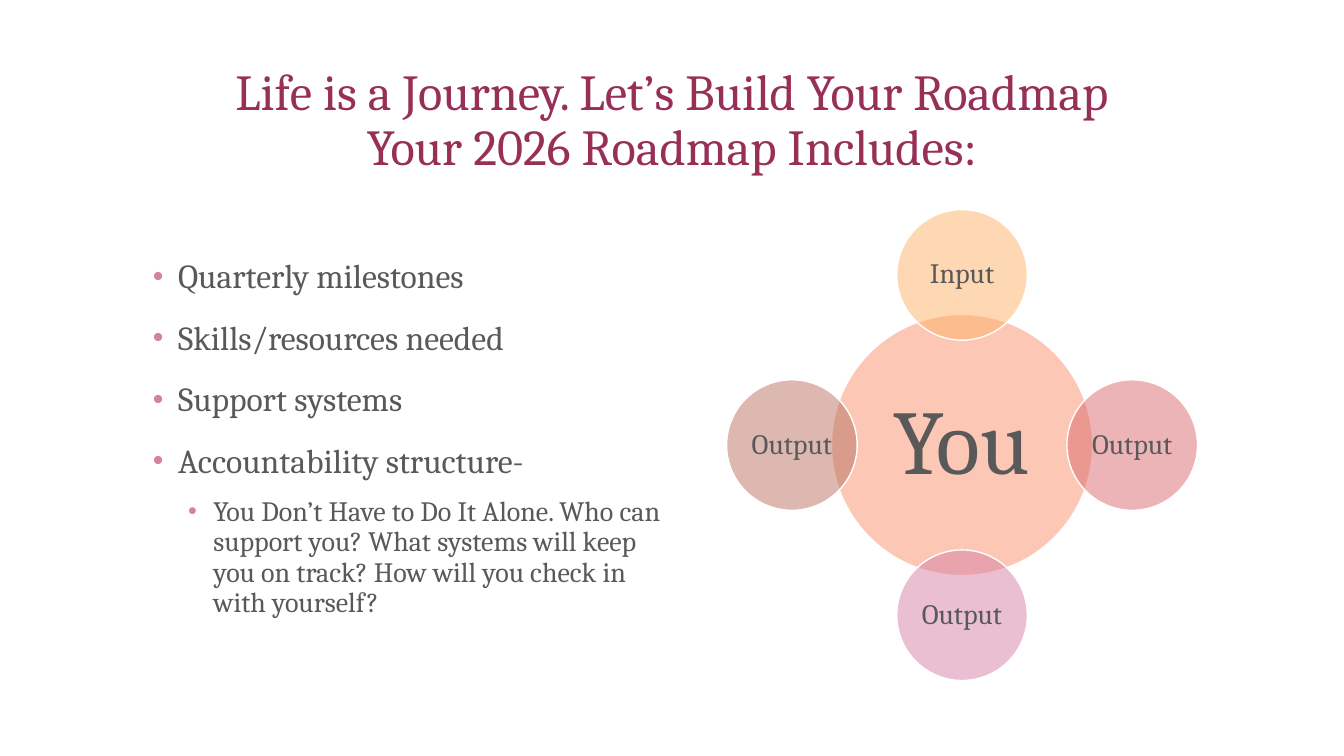
from dataclasses import dataclass
from math import cos, pi, sin

from lxml.etree import SubElement
from pptx import Presentation
from pptx.dml.color import RGBColor as Color
from pptx.enum.shapes import MSO_SHAPE as Form
from pptx.enum.text import MSO_ANCHOR as Anchor, MSO_AUTO_SIZE as Fit, PP_ALIGN as Align
from pptx.oxml.ns import qn
from pptx.util import Pt


@dataclass(frozen=True)
class Theme:
    face: str = "Cambria"
    head: str = "972F57"
    ink: str = "595959"
    dot: str = "D680A5"
    rim: str = "FFFFFF"
    hub: str = "FA906A"
    title: int = 36
    list: int = 24
    small: int = 20
    big: int = 65


THEME = Theme()
TITLE = "Life is a Journey. Let’s Build Your Roadmap\vYour 2026 Roadmap Includes:"
ITEMS = [
    ("Quarterly milestones", 0),
    ("Skills/resources needed", 0),
    ("Support systems", 0),
    ("Accountability structure-", 0),
    ("You Don’t Have to Do It Alone. Who can support you? "
     "What systems will keep you on track? How will you check in with yourself?", 1),
]
# Clockwise from the top
ORBIT = [("Input", "FCB268"), ("Output", "DB6B70"),
         ("Output", "D680A5"), ("Output", "BA7362")]


def place(shape, box):
    shape.left, shape.top, shape.width, shape.height = map(Pt, box)


def style(para, size, color):
    para.line_spacing = 0.9
    para.font.name = THEME.face
    para.font.size = Pt(size)
    para.font.color.rgb = Color.from_string(color)


def add_dot(para, left):
    props = para._p.get_or_add_pPr()
    props.set("marL", str(Pt(left)))
    props.set("indent", str(Pt(-18)))
    tint = SubElement(props, qn("a:buClr"))
    SubElement(tint, qn("a:srgbClr"), val=THEME.dot)
    SubElement(props, qn("a:buSzPct"), val="90000")
    SubElement(props, qn("a:buFont"), typeface="Arial")
    SubElement(props, qn("a:buChar"), char="•")


def fill_title(shape, box):
    place(shape, box)
    frame = shape.text_frame
    frame.text = TITLE
    frame.auto_size = Fit.NONE
    frame.vertical_anchor = Anchor.BOTTOM
    para = frame.paragraphs[0]
    para.alignment = Align.CENTER
    style(para, THEME.title, THEME.head)


def fill_list(shape, box):
    place(shape, box)
    frame = shape.text_frame
    frame.text = "\n".join(text for text, _ in ITEMS)
    frame.auto_size = Fit.NONE
    frame.vertical_anchor = Anchor.TOP
    for num, (para, (_, level)) in enumerate(zip(frame.paragraphs, ITEMS)):
        para.level = level
        add_dot(para, 43.2 if level else 18)
        para.space_before = Pt((12 if level else 18) if num else 0)
        style(para, THEME.small if level else THEME.list, THEME.ink)


def add_disc(group, mid, size, text, color, points, inset):
    x, y = mid
    disc = group.shapes.add_shape(
        Form.OVAL, Pt(x - size / 2), Pt(y - size / 2), Pt(size), Pt(size))
    disc.shadow.inherit = False
    disc.fill.solid()
    disc.fill.fore_color.rgb = Color.from_string(color)
    tone = disc.fill._xPr.find(".//" + qn("a:srgbClr"))
    SubElement(tone, qn("a:alpha"), val="50000")
    disc.line.color.rgb = Color.from_string(THEME.rim)
    disc.line.width = Pt(1)
    frame = disc.text_frame
    frame.text = text
    frame.word_wrap = True
    frame.vertical_anchor = Anchor.MIDDLE
    frame.margin_left = frame.margin_right = Pt(inset)
    frame.margin_top = frame.margin_bottom = Pt(inset)
    para = frame.paragraphs[0]
    para.alignment = Align.CENTER
    style(para, points, THEME.ink)


def add_wheel(slide, box):
    left, top, side = box
    group = slide.shapes.add_group_shape()
    x, y = left + side / 2, top + side / 2
    small = 93.3
    reach = (side - small) / 2
    # Hub, twice the width of the discs around it
    add_disc(group, (x, y), 2 * small, "You", THEME.hub, THEME.big, 6.5)
    # Discs at equal angles
    for num, (text, color) in enumerate(ORBIT):
        turn = 2 * pi * num / len(ORBIT)
        mid = x + reach * sin(turn), y - reach * cos(turn)
        add_disc(group, mid, small, text, color, THEME.small, 2)


def main():
    deck = Presentation()
    deck.slide_width, deck.slide_height = Pt(960), Pt(540)
    slide = deck.slides.add_slide(deck.slide_layouts[1])
    fill_title(slide.shapes.title, (84, 36, 792, 93.6))
    fill_list(slide.placeholders[1], (102, 182, 378, 336))
    add_wheel(slide, (519, 149.7, 336.4))
    deck.save("out.pptx")


if __name__ == "__main__":
    main()
